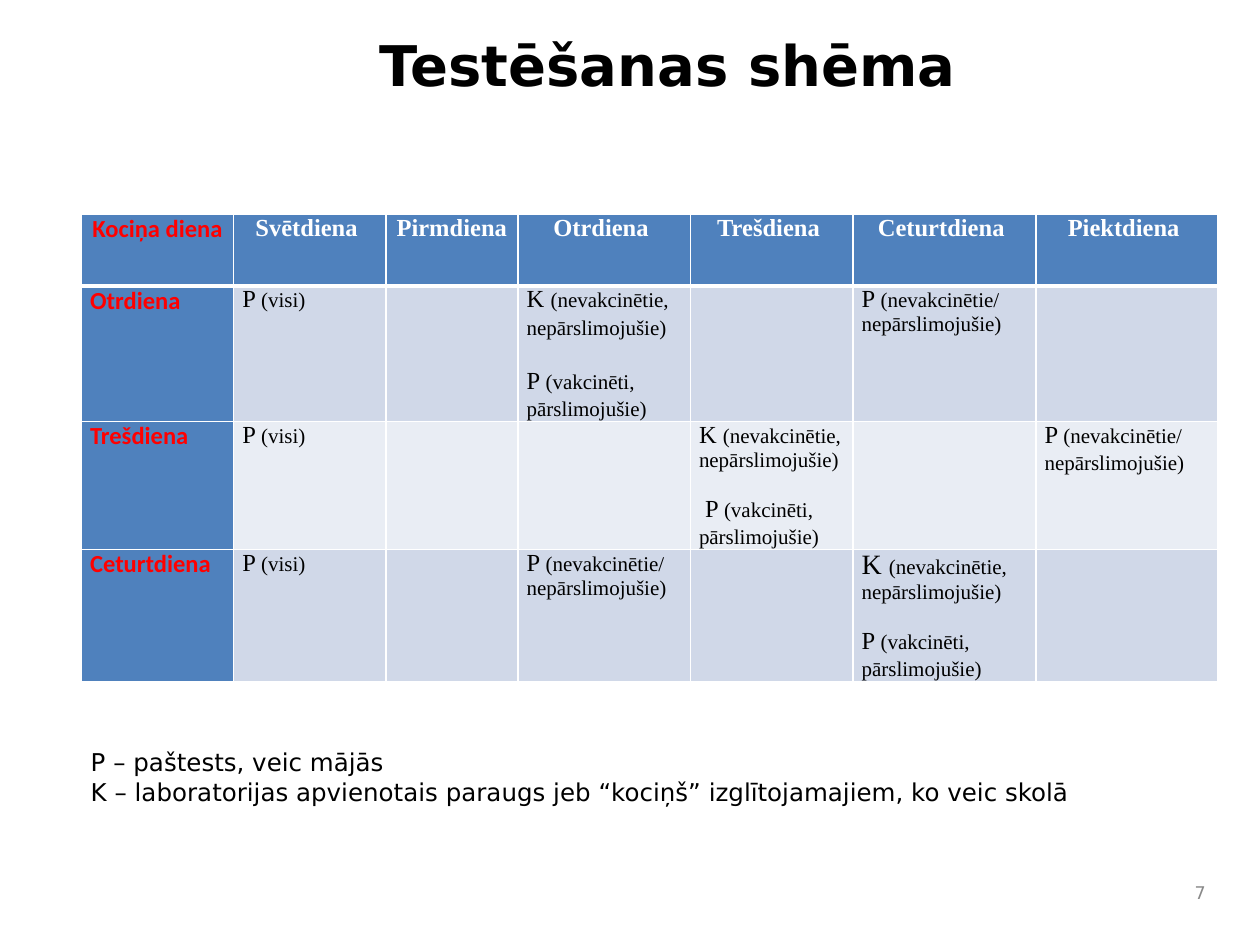
from dataclasses import dataclass, field

from lxml.etree import SubElement
from pptx import Presentation
from pptx.dml.color import RGBColor
from pptx.enum.text import MSO_ANCHOR as Anchor, MSO_AUTO_SIZE as AutoSize, PP_ALIGN as Align
from pptx.oxml.ns import qn
from pptx.util import Pt

COLORS = {"black": "000000", "white": "FFFFFF", "red": "FF0000", "blue": "4F81BD",
          "dark_band": "D0D8E8", "light_band": "E9EDF4", "gray": "898989"}
SANS, SERIF, LABEL = "DejaVu Sans", "Times New Roman", "Calibri"

COLUMN_WIDTHS = [87, 87, 75.5, 98.5, 93, 104.5, 104]
ROW_HEIGHTS = [41, 76.5, 73, 75.5]
POOL_HEADING = "Kociņa diena"
WEEKDAYS = ["Svētdiena ", "Pirmdiena", "Otrdiena ", "Trešdiena ", "Ceturtdiena ", "Piektdiena "]

EVERYONE = [("P ", 14), ("(visi)", 12)]
REPEAT = [("P ", 14), ("(nevakcinētie/ nepārslimojušie)", 12)]
POOL = [("K ", 14), ("(nevakcinētie, nepārslimojušie)", 12)]
LARGE_POOL = [("K ", 16), POOL[1]]
SELF_TEST = [("P ", 14), ("(vakcinēti, pārslimojušie)", 12), (" ", 14)]
INDENTED_TEST = [(" P ", 14), *SELF_TEST[1:]]
TAIL = [(" ", 14)]

# day label, gap between paragraphs, paragraphs by column
SCHEDULE = [
    ("Otrdiena", 15.5, {1: [EVERYONE], 3: [POOL + TAIL, SELF_TEST], 5: [REPEAT]}),
    ("Trešdiena", 13.3, {1: [EVERYONE], 4: [POOL, INDENTED_TEST], 6: [REPEAT + TAIL]}),
    ("Ceturtdiena", 13.3, {1: [EVERYONE], 3: [REPEAT], 5: [LARGE_POOL, SELF_TEST]}),
]


@dataclass
class SlideWriter:
    """Holds the style and the current page, and adds each kind of element."""
    page: object
    colors: dict = field(default_factory=lambda: COLORS)

    def rgb(self, name):
        return RGBColor.from_string(self.colors[name])

    def span(self, para, text, size, font, color="black", bold=False):
        span = para.add_run()
        span.text = text
        span.font.size, span.font.name, span.font.bold = Pt(size), font, bold
        span.font.color.rgb = self.rgb(color)

    def box(self, left, top, width, height, lines, size, align=Align.LEFT,
            anchor=Anchor.TOP, grow=True, **style):
        box = self.page.shapes.add_textbox(Pt(left), Pt(top), Pt(width), Pt(height))
        frame = box.text_frame
        frame.word_wrap = True
        frame.vertical_anchor = anchor
        frame.auto_size = AutoSize.SHAPE_TO_FIT_TEXT if grow else AutoSize.NONE
        for index, line in enumerate(lines):
            para = frame.add_paragraph() if index else frame.paragraphs[0]
            para.alignment = align
            self.span(para, line, size, SANS, **style)

    def table(self, left, top, widths, heights):
        table = self.page.shapes.add_table(len(heights), len(widths), Pt(left), Pt(top),
                                           Pt(sum(widths)), Pt(sum(heights))).table
        for column, width in zip(table.columns, widths):
            column.width = Pt(width)
        for row, height in zip(table.rows, heights):
            row.height = Pt(height)
        return table

    def border(self, cell, side, width):
        line = SubElement(cell._tc.get_or_add_tcPr(), qn(f"a:ln{side}"), w=str(Pt(width)))
        fill = SubElement(line, qn("a:solidFill"))
        SubElement(fill, qn("a:srgbClr"), val=self.colors["white"])

    def cell(self, cell, fill, paragraphs=(), font=SERIF, color="black", bold=False,
             align=Align.LEFT, gap=0, top=1, bottom=1):
        cell.margin_left = cell.margin_right = Pt(5)
        cell.margin_top = cell.margin_bottom = 0
        for side, width in (("L", 1), ("R", 1), ("T", top), ("B", bottom)):
            self.border(cell, side, width)
        cell.fill.solid()
        cell.fill.fore_color.rgb = self.rgb(fill)
        for index, spans in enumerate(paragraphs):
            para = cell.text_frame.add_paragraph() if index else cell.text_frame.paragraphs[0]
            para.alignment = align
            if index:
                para.space_before = Pt(gap)
            for text, size in spans:
                self.span(para, text, size, font, color, bold)


def main():
    deck = Presentation()
    deck.slide_width, deck.slide_height = Pt(720), Pt(540)
    writer = SlideWriter(deck.slides.add_slide(deck.slide_layouts[6]))

    writer.box(672, 498, 24, 24, ["7"], 10, Align.RIGHT, Anchor.MIDDLE, False, color="gray")

    table = writer.table(46.5, 122.5, COLUMN_WIDTHS, ROW_HEIGHTS)
    for column, day in enumerate([POOL_HEADING, *WEEKDAYS]):
        font, color = (SERIF, "white") if column else (LABEL, "red")
        writer.cell(table.cell(0, column), "blue", [[(day, 14)]], font, color, True,
                    Align.CENTER, bottom=3)
    for row, (day, gap, tests) in enumerate(SCHEDULE, 1):
        top = 3 if row == 1 else 1
        band = "dark_band" if row % 2 else "light_band"
        writer.cell(table.cell(row, 0), "blue", [[(day, 14)]], LABEL, "red", True, top=top)
        for column in range(1, len(COLUMN_WIDTHS)):
            writer.cell(table.cell(row, column), band, tests.get(column, ()), gap=gap, top=top)

    writer.box(44.8, 423.5, 639.5, 41, [
        "P – paštests, veic mājās",
        "K – laboratorijas apvienotais paraugs jeb “kociņš” izglītojamajiem, ko veic skolā",
    ], 14)
    writer.box(44.8, 13.7, 674, 46, ["Testēšanas shēma"], 32, Align.CENTER, bold=True)

    deck.save("out.pptx")


if __name__ == "__main__":
    main()
